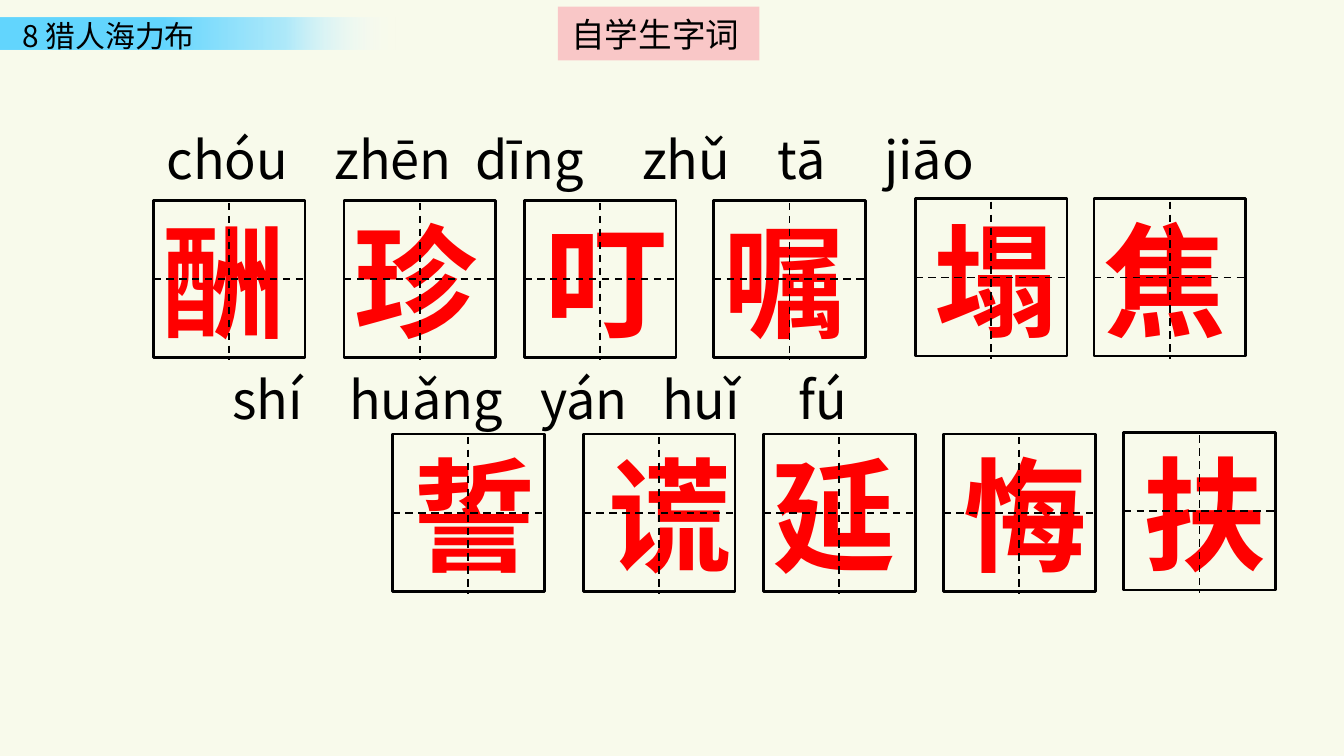
from lxml import etree
from pptx import Presentation
from pptx.dml.color import RGBColor
from pptx.enum.dml import MSO_LINE_DASH_STYLE as Dash
from pptx.enum.shapes import MSO_CONNECTOR as Connector, MSO_SHAPE as Shape
from pptx.enum.text import MSO_ANCHOR as Anchor, MSO_AUTO_SIZE as AutoSize, PP_ALIGN as Align
from pptx.oxml.ns import qn
from pptx.util import Inches, Pt

CREAM = RGBColor(0xF8, 0xFA, 0xEB)
PINK = RGBColor(0xF9, 0xC7, 0xC7)
RED = RGBColor(0xFF, 0x00, 0x00)
BLACK = RGBColor(0x00, 0x00, 0x00)
SKY = RGBColor(0x63, 0xD6, 0xFF)
PALE_SKY = RGBColor(0x97, 0xE4, 0xFF)
WHITE = RGBColor(0xFF, 0xFF, 0xFF)

CJK_FONT = "Noto Sans CJK SC"
TITLE_FONT = "Times New Roman"
CELL_WIDTH, CELL_HEIGHT = 1.13, 1.17

# Character, cell left, cell top, text left, text width
CHARACTERS = [
    ("酬", 1.14, 1.49, 1.14, 0.67),
    ("珍", 2.56, 1.49, 2.56, 1.09),
    ("叮", 3.90, 1.49, 3.98, 1.03),
    ("嘱", 5.31, 1.49, 5.31, 1.03),
    ("塌", 6.81, 1.48, 6.88, 0.67),
    ("焦", 8.14, 1.48, 8.14, 1.02),
    ("誓", 2.92, 3.23, 3.00, 0.62),
    ("谎", 4.34, 3.23, 4.46, 0.67),
    ("延", 5.68, 3.23, 5.68, 0.67),
    ("悔", 7.02, 3.23, 7.10, 0.93),
    ("扶", 8.36, 3.22, 8.44, 0.93),
]


def write_text(shape, text, size, color=BLACK, font=CJK_FONT, bold=False,
               margins=(0.1, 0.05)):
    """Write one left-aligned paragraph and return it."""
    frame = shape.text_frame
    frame.word_wrap = True
    frame.auto_size = AutoSize.NONE
    frame.vertical_anchor = Anchor.TOP
    frame.margin_left = frame.margin_right = Inches(margins[0])
    frame.margin_top = frame.margin_bottom = Inches(margins[1])
    paragraph = frame.paragraphs[0]
    paragraph.alignment = Align.LEFT
    paragraph.line_spacing = 1.0
    paragraph.space_before = Pt(0)
    run = paragraph.add_run()
    run.text = text
    run.font.size = Pt(size)
    run.font.bold = bold
    run.font.color.rgb = color
    run.font.name = font
    east_asian = etree.SubElement(run.font._element, qn("a:ea"))
    east_asian.set("typeface", CJK_FONT)
    return paragraph


def add_text(slide, text, left, top, width, height, size, **options):
    box = slide.shapes.add_textbox(Inches(left), Inches(top), Inches(width), Inches(height))
    return write_text(box, text, size, **options)


def add_pinyin(slide, syllables, left, top, width, stops):
    """Set a row of syllables on tab stops."""
    text = "\t".join(syllables)
    if len(stops) == len(syllables):
        text = "\t" + text
    paragraph = add_text(slide, text, left, top, width, 0.57, 28)
    properties = paragraph._p.get_or_add_pPr()
    tab_list = etree.SubElement(properties, qn("a:tabLst"))
    for stop in stops:
        etree.SubElement(tab_list, qn("a:tab"), pos=str(Inches(stop)), algn="l")


def add_guide(group, start, end):
    """Add a dashed guide line to a writing cell."""
    x1, y1, x2, y2 = (Inches(value) for value in (*start, *end))
    guide = group.shapes.add_connector(Connector.STRAIGHT, x1, y1, x2, y2)
    guide.line.color.rgb = BLACK
    guide.line.width = Pt(1)
    guide.line.dash_style = Dash.DASH
    etree.SubElement(guide._element.spPr, qn("a:effectLst"))
    return guide


def add_cell(slide, left, top):
    """Add a writing cell: a frame with a dashed cross."""
    group = slide.shapes.add_group_shape()
    frame = group.shapes.add_shape(Shape.RECTANGLE, Inches(left), Inches(top),
                                   Inches(CELL_WIDTH), Inches(CELL_HEIGHT))
    frame.shadow.inherit = False
    frame.fill.background()
    frame.line.color.rgb = BLACK
    frame.line.width = Pt(1.5)
    middle_x, middle_y = left + CELL_WIDTH / 2, top + CELL_HEIGHT / 2
    horizontal = add_guide(group, (left, middle_y), (left + CELL_WIDTH, middle_y))
    horizontal.begin_connect(frame, 1)
    horizontal.end_connect(frame, 3)
    add_guide(group, (middle_x, top + 0.02), (middle_x, top + 0.02 + CELL_HEIGHT))


def add_lesson_band(slide):
    """Add the lesson name on a band that fades out to the right."""
    band = slide.shapes.add_shape(Shape.RECTANGLE, 0, Inches(0.13), Inches(3.03), Inches(0.24))
    band.shadow.inherit = False
    band.line.fill.background()
    band.fill.gradient()
    band.fill.gradient_angle = 0
    stop_list = band._element.spPr.find(qn("a:gradFill")).find(qn("a:gsLst"))
    for stop in list(stop_list):
        stop_list.remove(stop)
    for position, color, opacity in ((40, SKY, 100), (70, PALE_SKY, 76), (97, WHITE, 0)):
        stop = etree.SubElement(stop_list, qn("a:gs"), pos=str(position * 1000))
        fill = etree.SubElement(stop, qn("a:srgbClr"), val=str(color))
        etree.SubElement(fill, qn("a:alpha"), val=str(opacity * 1000))
    add_text(slide, "8 猎人海力布", 0.07, 0.08, 1.69, 0.37, 16)


def format_title(slide):
    title = slide.shapes.title
    title.left, title.top = Inches(4.15), Inches(0.05)
    title.width, title.height = Inches(1.5), Inches(0.4)
    title.fill.solid()
    title.fill.fore_color.rgb = PINK
    write_text(title, "自学生字词", 18, font=TITLE_FONT)


def main():
    presentation = Presentation()
    presentation.slide_width, presentation.slide_height = Inches(10), Inches(5.625)
    slide = presentation.slides.add_slide(presentation.slide_layouts[5])
    slide.background.fill.solid()
    slide.background.fill.fore_color.rgb = CREAM

    # Heading
    add_lesson_band(slide)
    format_title(slide)

    # Characters in their writing cells
    for character, left, top, text_left, text_width in CHARACTERS:
        add_text(slide, character, text_left, top, text_width, 1.19, 66,
                 color=RED, bold=True, margins=(0.07, 0.04))
        add_cell(slide, left, top)

    # Pinyin above each row
    add_pinyin(slide, ["chóu", "zhēn", "dīng", "zhǔ", "tā", "jiāo"],
               1.14, 0.9, 8.23, [1.25, 2.3, 3.54, 4.55, 5.34])
    add_pinyin(slide, ["shí", "huǎng", "yán", "huǐ", "fú"],
               0.5, 2.68, 9.23, [1.13, 2, 3.42, 4.33, 5.34])

    presentation.save("out.pptx")


if __name__ == "__main__":
    main()
